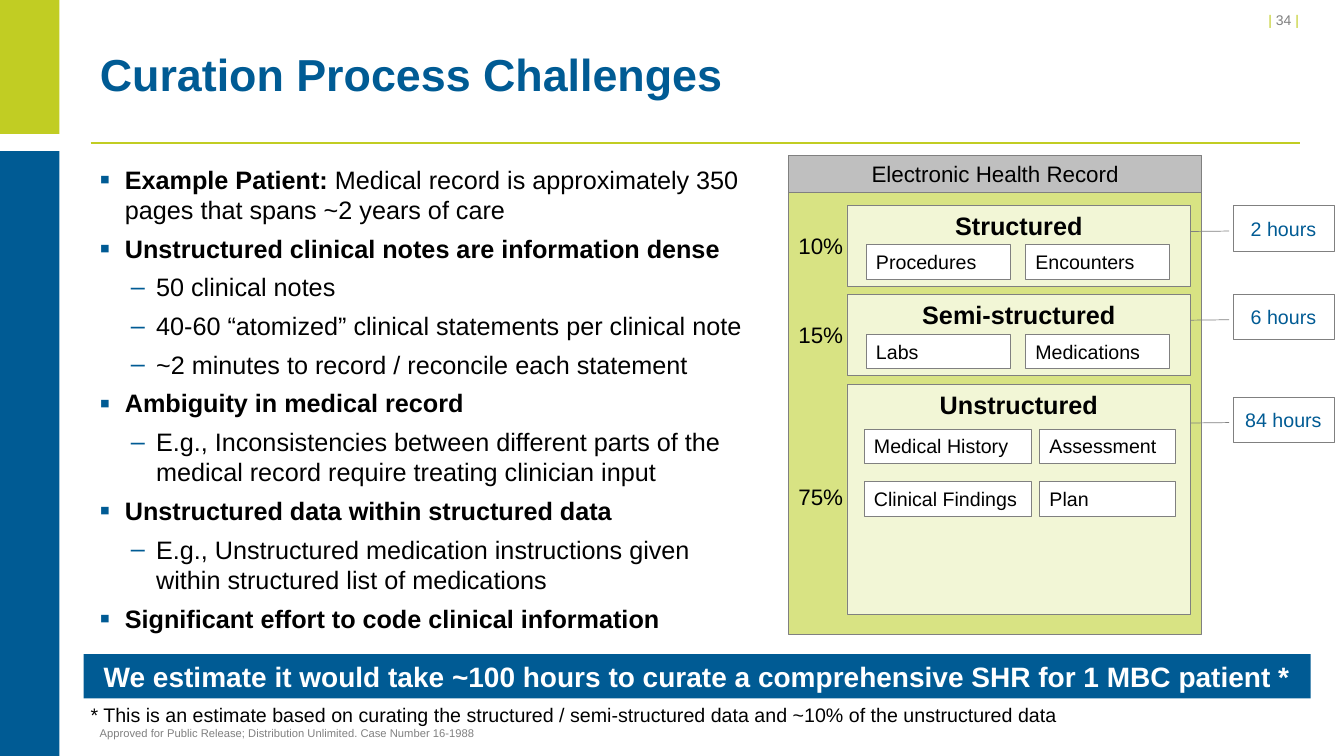
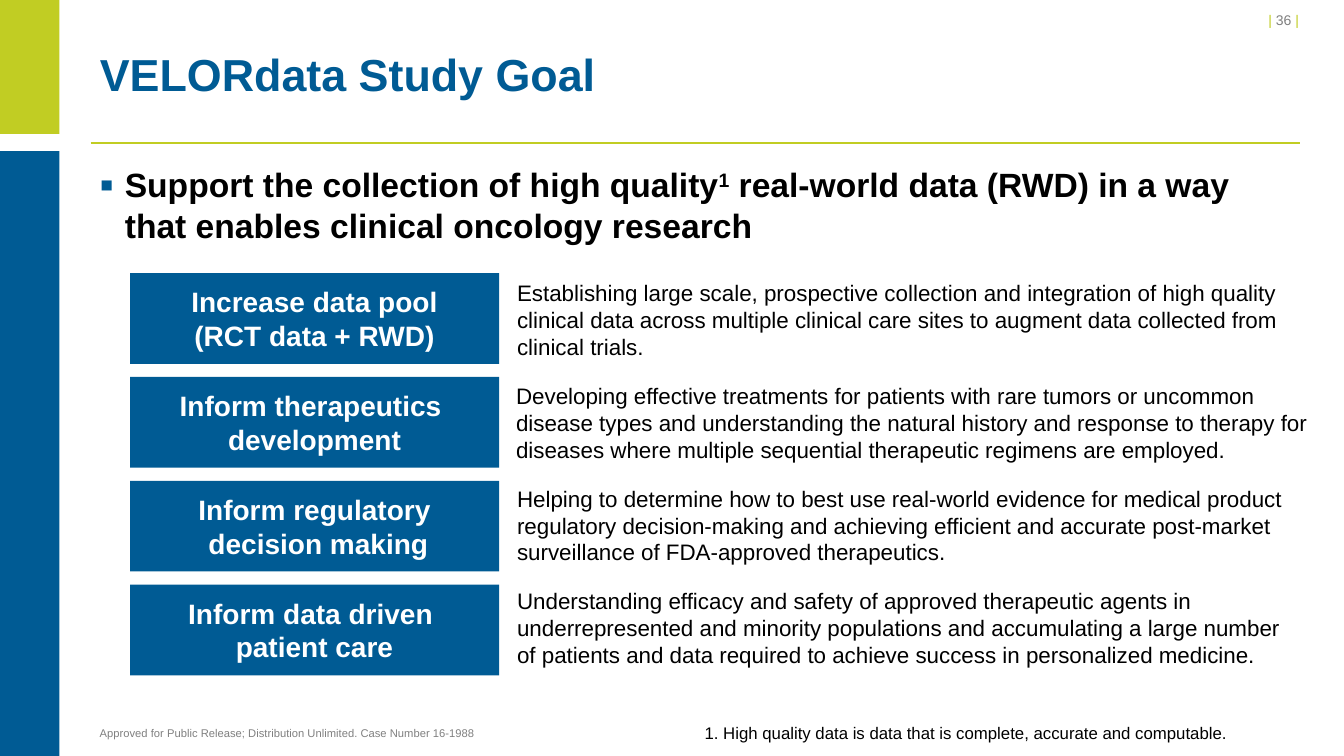
import dataclasses
import typing

import lxml.etree
import pptx
import pptx.dml.color
import pptx.enum.shapes
import pptx.enum.text
import pptx.oxml.ns
import pptx.presentation
import pptx.shapes.autoshape
import pptx.slide
import pptx.util

Inches = pptx.util.Inches
Pt = pptx.util.Pt
Align = pptx.enum.text.PP_ALIGN
Anchor = pptx.enum.text.MSO_ANCHOR
ShapeKind = pptx.enum.shapes.MSO_SHAPE
qn = pptx.oxml.ns.qn


@dataclasses.dataclass(frozen=True)
class Theme:
    font: str = "Arial"
    blue: str = "005B94"
    lime: str = "C1CD23"
    lime_mid: str = "D8E383"
    lime_pale: str = "F2F6D6"
    grey: str = "808080"
    silver: str = "BFBFBF"
    white: str = "FFFFFF"
    black: str = "000000"
    title: int = 32
    goal: int = 24
    banner: int = 20
    heading: int = 18
    body: int = 16
    label: int = 14
    note: int = 12
    number: int = 10
    footer: int = 8


THEME = Theme()


class Area(typing.NamedTuple):
    left: float
    top: float
    width: float
    height: float

    def lengths(self) -> list[pptx.util.Length]:
        return [Inches(value) for value in self]


@dataclasses.dataclass(frozen=True)
class Span:
    text: str
    size: int = THEME.body
    color: str = THEME.black
    bold: bool = False
    superscript: bool = False


@dataclasses.dataclass(frozen=True)
class Bullet:
    spans: tuple[Span, ...]
    level: int = 0


@dataclasses.dataclass(frozen=True)
class RecordSection:
    title: str
    share: str
    hours: str
    top: float
    height: float
    share_drop: float
    hours_drop: float
    item_drop: float
    item_columns: tuple[tuple[float, float], ...]
    items: tuple[str, ...]


@dataclasses.dataclass(frozen=True)
class Goal:
    name: str
    detail: str
    left: float = 5.03
    width: float = 7.85


PAIRED = ((8.59, 1.43), (10.17, 1.43))
UNEVEN = ((8.57, 1.66), (10.31, 1.35))
ITEM_STEP = 0.52

SECTIONS = (
    RecordSection("Structured", "10%", "2 hours", 2.04, 0.8, 0.21, 0, 0.39, PAIRED,
                  ("Procedures", "Encounters")),
    RecordSection("Semi-structured", "15%", "6 hours", 2.92, 0.8, 0.22, 0, 0.4, PAIRED,
                  ("Labs", "Medications")),
    RecordSection("Unstructured", "75%", "84 hours", 3.81, 2.29, 0.93, 0.13, 0.45, UNEVEN,
                  ("Medical History", "Assessment", "Clinical Findings", "Plan")),
)

GOALS = (
    Goal("Increase data pool\n(RCT data + RWD)",
         "Establishing large scale, prospective collection and integration of high quality "
         "clinical data across multiple clinical care sites to augment data collected from "
         "clinical trials."),
    Goal("Inform therapeutics \ndevelopment",
         "Developing effective treatments for patients with rare tumors or uncommon disease "
         "types and understanding the natural history and response to therapy for diseases "
         "where multiple sequential therapeutic regimens are employed.", 5.02, 8.14),
    Goal("Inform regulatory\n decision making",
         "Helping to determine how to best use real-world evidence for medical product "
         "regulatory decision-making and achieving efficient and accurate post-market "
         "surveillance of FDA-approved therapeutics."),
    Goal("Inform data driven \npatient care",
         "Understanding efficacy and safety of approved therapeutic agents in "
         "underrepresented and minority populations and accumulating a large number of "
         "patients and data required to achieve success in personalized medicine."),
)


def topic(text: str, rest: str = "") -> Bullet:
    spans = (Span(text, THEME.heading, bold=True), Span(rest, THEME.heading))
    return Bullet(spans if rest else spans[:1])


def detail(text: str) -> Bullet:
    return Bullet((Span(text, THEME.heading),), 1)


CHALLENGES = (
    topic("Example Patient:",
          " Medical record is approximately 350 pages that spans ~2 years of care"),
    topic("Unstructured clinical notes are information dense"),
    detail("50 clinical notes"),
    detail("40-60 “atomized” clinical statements per clinical note"),
    detail("~2 minutes to record / reconcile each statement"),
    topic("Ambiguity in medical record"),
    detail("E.g., Inconsistencies between different parts of the medical record require "
           "treating clinician input"),
    topic("Unstructured data within structured data"),
    detail("E.g., Unstructured medication instructions given within structured list of "
           "medications"),
    topic("Significant effort to code clinical information"),
)


def rgb(color: str) -> pptx.dml.color.RGBColor:
    return pptx.dml.color.RGBColor.from_string(color)


def assign(target: typing.Any, values: dict[str, typing.Any]) -> None:
    for name, value in values.items():
        setattr(target, name, value)


def write(para: typing.Any, spans: typing.Iterable[Span], **paragraph: typing.Any) -> None:
    assign(para, {"alignment": Align.LEFT, **paragraph})
    for span in spans:
        for index, line in enumerate(span.text.split("\n")):
            if index:
                para.add_line_break()
            run = para.add_run()
            run.text = line
            assign(run.font, {"name": THEME.font, "size": Pt(span.size), "bold": span.bold})
            run.font.color.rgb = rgb(span.color)
            if span.superscript:
                run.font._element.set("baseline", "30000")


def set_frame(box: typing.Any, anchor: Anchor = Anchor.TOP, wrap: bool = True) -> typing.Any:
    assign(box.text_frame, {"auto_size": pptx.enum.text.MSO_AUTO_SIZE.NONE,
                            "word_wrap": wrap, "vertical_anchor": anchor})
    return box.text_frame


def add_text(page: pptx.slide.Slide, area: Area, *spans: Span, anchor: Anchor = Anchor.TOP,
             wrap: bool = True, **paragraph: typing.Any) -> None:
    frame = set_frame(page.shapes.add_textbox(*area.lengths()), anchor, wrap)
    write(frame.paragraphs[0], spans, **paragraph)


def add_box(page: pptx.slide.Slide, area: Area, fill: str | None, line: float = 0,
            span: Span | None = None, anchor: Anchor = Anchor.TOP,
            align: Align = Align.CENTER, kind: ShapeKind = ShapeKind.RECTANGLE,
            ) -> pptx.shapes.autoshape.Shape:
    box = page.shapes.add_shape(kind, *area.lengths())
    box.shadow.inherit = False
    if fill:
        box.fill.solid()
        box.fill.fore_color.rgb = rgb(fill)
    else:
        box.fill.background()
    if line:
        box.line.color.rgb = rgb(THEME.grey)
        box.line.width = Pt(line)
    else:
        box.line.fill.background()
    if span:
        write(set_frame(box, anchor).paragraphs[0], [span], alignment=align)
    return box


def add_bullets(page: pptx.slide.Slide, area: Area, bullets: typing.Iterable[Bullet]) -> None:
    frame = set_frame(page.shapes.add_textbox(*area.lengths()))
    for index, bullet in enumerate(bullets):
        para = frame.add_paragraph() if index else frame.paragraphs[0]
        write(para, bullet.spans, space_after=Pt(6), level=bullet.level)
        properties = para._p.get_or_add_pPr()
        properties.set("marL", str(Inches((0.25, 0.56)[bullet.level])))
        properties.set("indent", str(Inches(-0.25)))
        color = lxml.etree.SubElement(properties, qn("a:buClr"))
        lxml.etree.SubElement(color, qn("a:srgbClr"), val=THEME.blue)
        size = ("120000", "100000")[bullet.level]
        lxml.etree.SubElement(properties, qn("a:buSzPct"), val=size)
        lxml.etree.SubElement(properties, qn("a:buFont"), typeface=THEME.font)
        lxml.etree.SubElement(properties, qn("a:buChar"), char="▪–"[bullet.level])


def add_page(deck: pptx.presentation.Presentation, title: str, number: int) -> pptx.slide.Slide:
    page = deck.slides.add_slide(deck.slide_layouts[5])
    rule = page.shapes.add_connector(pptx.enum.shapes.MSO_CONNECTOR.STRAIGHT, Inches(0.9),
                                     Inches(1.42), Inches(12.89), Inches(1.42))
    rule.line.color.rgb = rgb(THEME.lime)
    rule.line.width = Pt(1)
    lxml.etree.SubElement(rule._element.spPr, qn("a:effectLst"))
    add_box(page, Area(0, 0, 0.59, 1.33), THEME.lime)
    add_box(page, Area(0, 1.5, 0.59, 6), THEME.blue)
    bar = Span("| ", THEME.number, THEME.lime)
    add_text(page, Area(10.68, 0.07, 2.34, 0.27), bar,
             Span(f"{number} ", THEME.number, THEME.grey), bar, alignment=Align.RIGHT)
    add_text(page, Area(0.89, 7.22, 3.93, 0.17),
             Span("Approved for Public Release; Distribution Unlimited. Case Number 16-1988",
                  THEME.footer, THEME.grey), anchor=Anchor.BOTTOM, line_spacing=Pt(13))
    heading = page.shapes.title
    area = Area(0.89, 0.3, 12, 0.95)
    assign(heading, dict(zip(Area._fields, area.lengths())))
    write(set_frame(heading, Anchor.MIDDLE).paragraphs[0],
          [Span(title, THEME.title, THEME.blue, True)], line_spacing=Pt(32))
    return page


def add_section(page: pptx.slide.Slide, section: RecordSection) -> None:
    add_box(page, Area(8.4, section.top, 3.41, section.height), THEME.lime_pale, 0.5,
            Span(section.title, THEME.heading, bold=True))
    for index, item in enumerate(section.items):
        row, column = divmod(index, len(section.item_columns))
        left, width = section.item_columns[column]
        top = section.top + section.item_drop + row * ITEM_STEP
        add_box(page, Area(left, top, width, 0.34), THEME.white, 0.75,
                Span(item, THEME.label), align=Align.LEFT)
    add_text(page, Area(7.82, section.top + section.share_drop, 0.65, 0.37),
             Span(section.share), wrap=False)
    callout = add_box(page, Area(12.23, section.top + section.hours_drop, 1, 0.45), None, 0.5,
                      Span(section.hours, THEME.label, THEME.blue), Anchor.MIDDLE,
                      kind=ShapeKind.LINE_CALLOUT_1)
    for index, value in enumerate((0.56, -0.04, 0.57, -0.42)):
        callout.adjustments[index] = value


def build_challenges(deck: pptx.presentation.Presentation) -> None:
    page = add_page(deck, "Curation Process Challenges", 34)
    add_box(page, Area(7.82, 1.91, 4.1, 4.38), THEME.lime_mid, 0.5)
    add_box(page, Area(7.82, 1.54, 4.1, 0.37), THEME.silver, 0.75,
            Span("Electronic Health Record"))
    for section in SECTIONS:
        add_section(page, section)
    add_bullets(page, Area(0.89, 1.58, 6.72, 5.09), CHALLENGES)
    add_box(page, Area(0.83, 6.49, 12.17, 0.44), THEME.blue, span=Span(
        "We estimate it would take ~100 hours to curate a comprehensive SHR for 1 MBC patient *",
        THEME.banner, THEME.white, True))
    add_text(page, Area(0.8, 6.92, 9.83, 0.34), Span(
        "* This is an estimate based on curating the structured / semi-structured data and "
        "~10% of the unstructured data", THEME.label), wrap=False)


def build_goals(deck: pptx.presentation.Presentation) -> None:
    page = add_page(deck, "VELORdata Study Goal", 36)
    add_bullets(page, Area(0.89, 1.58, 12, 1), [Bullet((
        Span("Support the collection of high quality", THEME.goal, bold=True),
        Span("1", THEME.goal, bold=True, superscript=True),
        Span(" real-world data (RWD) in a way that enables clinical oncology research",
             THEME.goal, bold=True)))])
    add_text(page, Area(6.89, 7.12, 5.43, 0.3), Span(
        "1. High quality data is data that is complete, accurate and computable.",
        THEME.note), wrap=False)
    for index, goal in enumerate(GOALS):
        add_box(page, Area(1.29, 2.71 + 1.03 * index, 3.66, 0.9), THEME.blue,
                span=Span(goal.name, THEME.banner, THEME.white, True), anchor=Anchor.MIDDLE)
        add_text(page, Area(goal.left, 2.72 + 1.02 * index, goal.width, 0.91),
                 Span(goal.detail))


def main() -> None:
    deck = pptx.Presentation()
    assign(deck, {"slide_width": Inches(13.33), "slide_height": Inches(7.5)})
    build_challenges(deck)
    build_goals(deck)
    deck.save("out.pptx")


if __name__ == "__main__":
    main()
